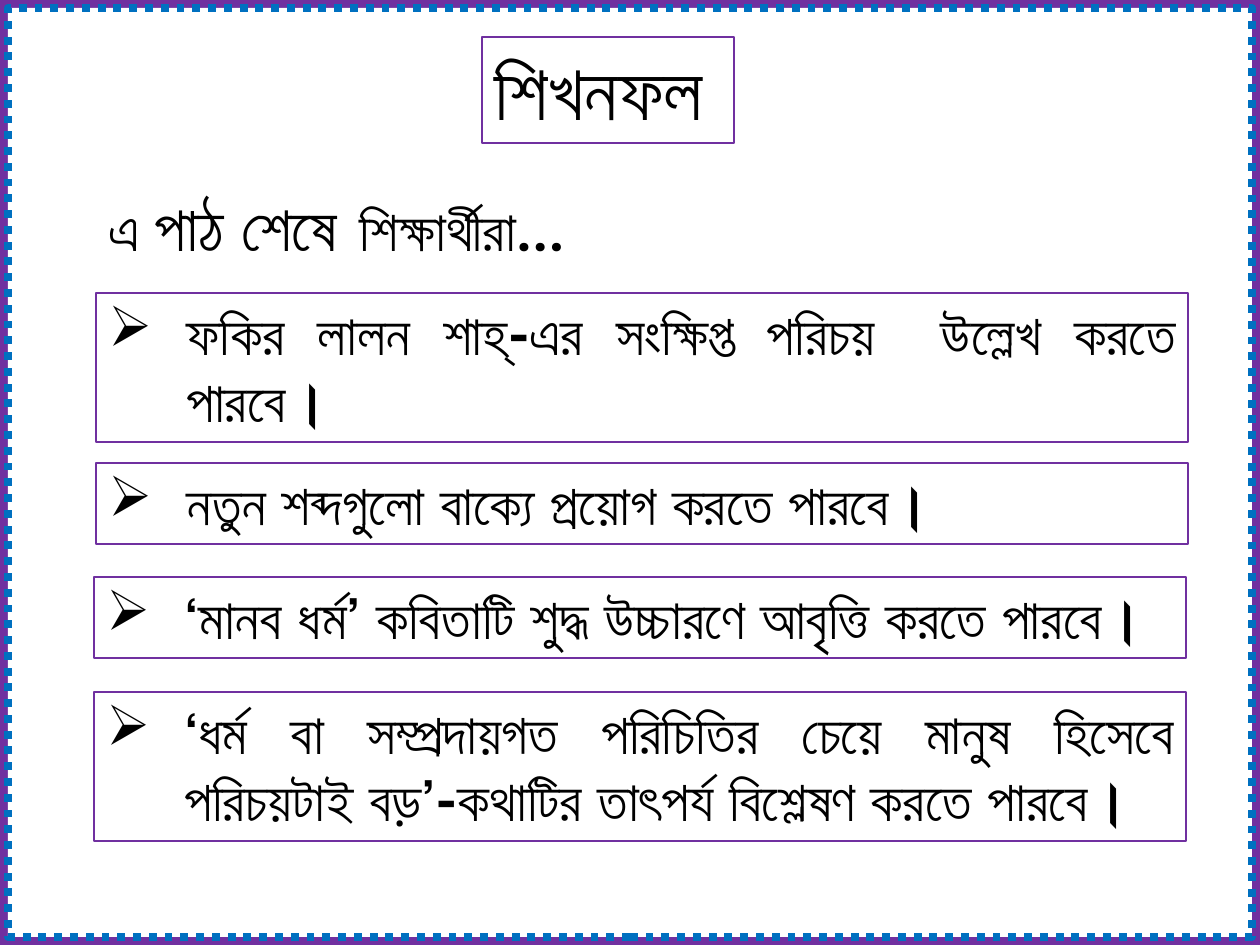
"""Build the learning outcomes slide of a Bengali poetry lesson."""
from lxml import etree
from pptx import Presentation
from pptx.dml.color import RGBColor
from pptx.enum.dml import MSO_LINE
from pptx.enum.shapes import MSO_SHAPE
from pptx.enum.text import MSO_ANCHOR, MSO_AUTO_SIZE, PP_ALIGN
from pptx.oxml.ns import qn
from pptx.util import Emu, Pt

RECT = MSO_SHAPE.RECTANGLE
DOTS = MSO_LINE.ROUND_DOT
TOP = MSO_ANCHOR.TOP
GROW = MSO_AUTO_SIZE.SHAPE_TO_FIT_TEXT
JUST = PP_ALIGN.JUSTIFY

FONT = "Roboto"
PURPLE, BLUE, WHITE, BLACK = "7030A0", "0070C0", "FFFFFF", "000000"
SCALE = 914400 / 126
SIZE = (1260, 945)
FRAME = (8, 8, 1244, 929)
INDENT = 78
EDGE = 0.9

TITLE = ((482, 37, 252, 106), [("শিখনফল", 44, EDGE)])
INTRO = ((96, 168, 833, 106), [
    ("এ ", 32, EDGE),
    ("পাঠ শেষে", 36, EDGE),
    (" ", 44, EDGE),
    ("শিক্ষার্থীরা...", 32, EDGE),
])
GOALS = [
    ((96, 293, 1092, 149), [
        ("ফকির ", 32, EDGE),
        ("লালন শাহ্", 32, 0.71),
        ("-এর সংক্ষিপ্ত পরিচয়  উল্লেখ করতে পারবে।", 32, EDGE),
    ]),
    ((96, 463, 1092, 81), [("নতুন শব্দগুলো বাক্যে প্রয়োগ করতে পারবে।", 32, EDGE)]),
    ((94, 577, 1092, 81), [("‘মানব ধর্ম’ কবিতাটি শুদ্ধ উচ্চারণে আবৃত্তি করতে পারবে।", 32, EDGE)]),
    ((94, 692, 1092, 149), [
        ("‘ধর্ম বা সম্প্রদায়গত পরিচিতির চেয়ে মানুষ হিসেবে পরিচয়টাই বড়’-কথাটির তাৎপর্য বিশ্লেষণ করতে পারবে।", 32, EDGE),
    ]),
]


def px(num):
    return Emu(round(num * SCALE))


def color(code):
    return RGBColor.from_string(code)


def add_edge(run, width):
    line = etree.Element(qn("a:ln"), w=str(Pt(width)))
    fill = etree.SubElement(line, qn("a:solidFill"))
    etree.SubElement(fill, qn("a:srgbClr"), val=BLACK)
    run.font._element.insert(0, line)


def add_mark(para):
    props = para._p.get_or_add_pPr()
    props.set("marL", str(px(INDENT)))
    props.set("indent", str(-px(INDENT)))
    etree.SubElement(props, qn("a:buFont"), typeface="Wingdings")
    etree.SubElement(props, qn("a:buChar"), char="Ø")


def add_rect(slide, place, ink, width):
    shape = slide.shapes.add_shape(RECT, *map(px, place))
    shape.shadow.inherit = False
    shape.fill.background()
    shape.line.color.rgb = color(ink)
    shape.line.width = Pt(width)
    return shape


def add_text(shape, runs, mark=False):
    frame = shape.text_frame
    frame.word_wrap = True
    frame.auto_size = GROW
    frame.vertical_anchor = TOP
    para = frame.paragraphs[0]
    para.alignment = JUST
    if mark:
        add_mark(para)
    for text, size, width in runs:
        run = para.add_run()
        run.text = text
        font = run.font
        font.name, font.size, font.bold = FONT, Pt(size), True
        font.color.rgb = color(BLACK)
        add_edge(run, width)


def main():
    deck = Presentation()
    deck.slide_width, deck.slide_height = map(px, SIZE)
    slide = deck.slides.add_slide(deck.slide_layouts[6])
    back = slide.background.fill
    back.solid()
    back.fore_color.rgb = color(PURPLE)

    frame = add_rect(slide, FRAME, BLUE, 4.5)
    frame.fill.solid()
    frame.fill.fore_color.rgb = color(WHITE)
    frame.line.dash_style = DOTS

    place, runs = TITLE
    add_text(add_rect(slide, place, PURPLE, 0.75), runs)
    place, runs = INTRO
    add_text(slide.shapes.add_textbox(*map(px, place)), runs)
    for place, runs in GOALS:
        add_text(add_rect(slide, place, PURPLE, 0.75), runs, mark=True)

    deck.save("out.pptx")


if __name__ == "__main__":
    main()
